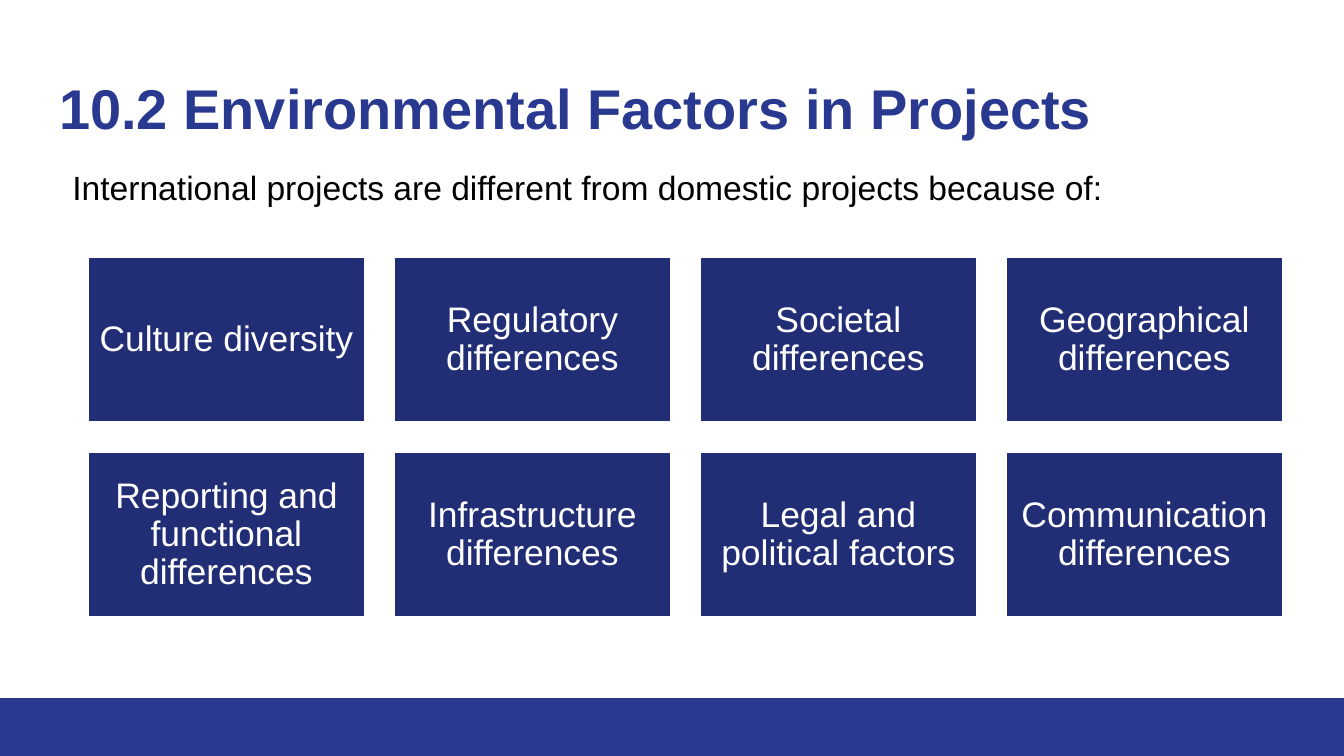
"""Build the slide on environmental factors in international projects."""
import pptx
import pptx.dml.color
import pptx.enum.shapes
import pptx.enum.text
import pptx.util

Inches = pptx.util.Inches
RGBColor = pptx.dml.color.RGBColor
Align = pptx.enum.text.PP_ALIGN
Anchor = pptx.enum.text.MSO_ANCHOR

TITLE = "10.2 Environmental Factors in Projects"
INTRO = "International projects are different from domestic projects because of:"
FACTORS = [
    "Culture diversity",
    "Regulatory differences",
    "Societal differences",
    "Geographical differences",
    "Reporting and functional differences",
    "Infrastructure differences",
    "Legal and political factors",
    "Communication differences",
]

BLUE = RGBColor(0x2A, 0x39, 0x90)
NAVY = RGBColor(0x21, 0x2D, 0x74)
WHITE = RGBColor(0xFF, 0xFF, 0xFF)
BLACK = RGBColor(0x00, 0x00, 0x00)

SLIDE_WIDTH = 10
SLIDE_HEIGHT = SLIDE_WIDTH * 9 / 16
FOOTER_HEIGHT = 0.43
COLUMNS = 4
GRID_LEFT, GRID_RIGHT, GRID_TOP = 0.65, 9.55, 1.91
CARD_WIDTH, CARD_HEIGHT = 2.07, 1.24
STEP_X = (GRID_RIGHT - GRID_LEFT - CARD_WIDTH) / (COLUMNS - 1)
STEP_Y = 1.45


def write_text(shape, text, *, size, color, bold=False, align=Align.LEFT,
               anchor=Anchor.TOP, margins=(0.1, 0.05), spacing=1.0):
    frame = shape.text_frame
    frame.word_wrap = True
    frame.auto_size = pptx.enum.text.MSO_AUTO_SIZE.NONE
    frame.vertical_anchor = anchor
    side, edge = map(Inches, margins)
    frame.margin_left = frame.margin_right = side
    frame.margin_top = frame.margin_bottom = edge
    para = frame.paragraphs[0]
    para.alignment = align
    para.line_spacing = spacing
    para.space_before = pptx.util.Pt(0)
    span = para.add_run()
    span.text = text
    span.font.name = "Arial"
    span.font.size = pptx.util.Pt(size)
    span.font.bold = bold
    span.font.color.rgb = color


def add_block(page, left, top, width, height, fill):
    block = page.shapes.add_shape(
        pptx.enum.shapes.MSO_SHAPE.RECTANGLE,
        Inches(left), Inches(top), Inches(width), Inches(height))
    block.shadow.inherit = False
    block.fill.solid()
    block.fill.fore_color.rgb = fill
    block.line.fill.background()
    return block


def main():
    deck = pptx.Presentation()
    deck.slide_width, deck.slide_height = Inches(SLIDE_WIDTH), Inches(SLIDE_HEIGHT)
    page = deck.slides.add_slide(deck.slide_layouts[5])

    add_block(page, 0, SLIDE_HEIGHT - FOOTER_HEIGHT, SLIDE_WIDTH, FOOTER_HEIGHT, BLUE)

    title = page.shapes.title
    title.left, title.top = Inches(0.34), Inches(0.45)
    title.width, title.height = Inches(9.32), Inches(0.66)
    write_text(title, TITLE, size=30, color=BLUE, bold=True, margins=(0.1, 0.1))

    intro = page.shapes.add_textbox(
        Inches(0.44), Inches(1.19), Inches(8.88), Inches(0.4))
    write_text(intro, INTRO, size=18, color=BLACK)

    for index, factor in enumerate(FACTORS):
        row, column = divmod(index, COLUMNS)
        card = add_block(page, GRID_LEFT + column * STEP_X,
                         GRID_TOP + row * STEP_Y, CARD_WIDTH, CARD_HEIGHT, NAVY)
        card.line.color.rgb = WHITE
        card.line.width = pptx.util.Pt(2)
        write_text(card, factor, size=19, color=WHITE, align=Align.CENTER,
                   anchor=Anchor.MIDDLE, margins=(0.08, 0.08), spacing=0.9)

    deck.save("out.pptx")


if __name__ == "__main__":
    main()
